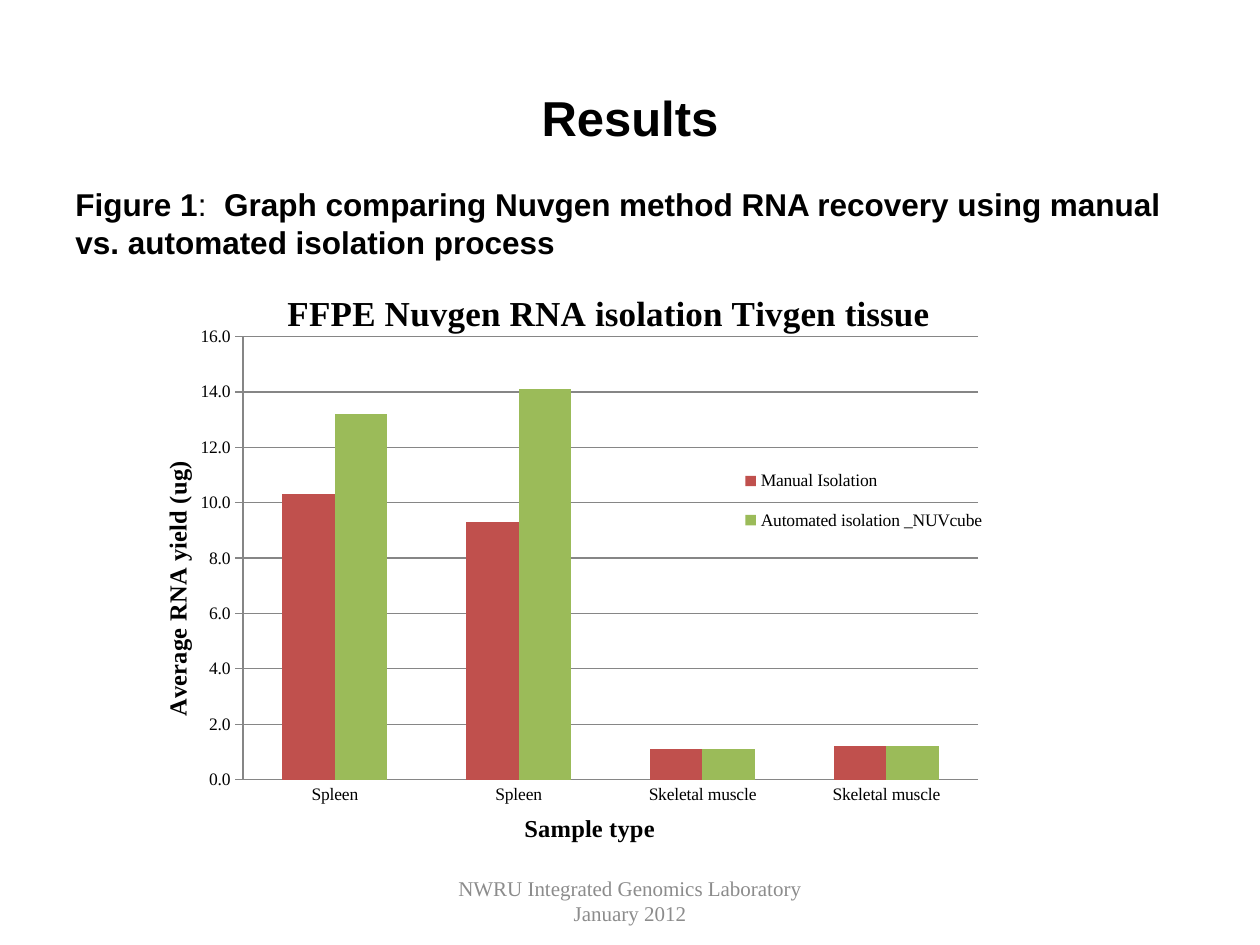
from dataclasses import dataclass

from lxml.etree import SubElement
from pptx import Presentation
from pptx.chart.data import CategoryChartData
from pptx.dml.color import RGBColor
from pptx.enum.chart import XL_CHART_TYPE as ChartType, XL_LEGEND_POSITION as LegendPosition
from pptx.enum.chart import XL_TICK_MARK as TickMark
from pptx.enum.text import MSO_ANCHOR as Anchor, PP_ALIGN as Align
from pptx.oxml.ns import qn
from pptx.util import Pt


@dataclass(frozen=True)
class Theme:
    """Colours, fonts and type sizes of the slide."""
    ink: str = "000000"
    muted: str = "8C8C8C"
    rule: str = "868686"
    sans: str = "Arial"
    serif: str = "Times New Roman"
    heading: float = 28
    chart_title: float = 20
    caption: float = 18
    axis_title: float = 14
    footer: float = 12
    label: float = 10


@dataclass(frozen=True)
class Box:
    """A rectangle in points."""
    left: float
    top: float
    width: float
    height: float

    def lengths(self):
        """Return the four sides as lengths."""
        return tuple(Pt(v) for v in (self.left, self.top, self.width, self.height))


@dataclass(frozen=True)
class Method:
    """One isolation method and its RNA yields."""
    name: str
    yields: tuple
    color: str


THEME = Theme()
SAMPLES = ("Spleen", "Spleen", "Skeletal muscle", "Skeletal muscle")
METHODS = (
    Method("Manual Isolation", (10.3, 9.3, 1.1, 1.2), "C0504D"),
    Method("Automated isolation _NUVcube", (13.2, 14.1, 1.1, 1.2), "9BBB59"),
)


def add_text(paragraph, text: str, *, size: float, font: str = THEME.serif,
             color: str = THEME.ink, bold: bool = False, align=None) -> None:
    """Append a formatted run to a paragraph."""
    run = paragraph.add_run()
    run.text = text
    run.font.size, run.font.name, run.font.bold = Pt(size), font, bold
    run.font.color.rgb = RGBColor.from_string(color)
    if align is not None:
        paragraph.alignment = align


def add_box(slide, box: Box, anchor=Anchor.TOP):
    """Add a wrapping text box and return its first paragraph."""
    frame = slide.shapes.add_textbox(*box.lengths()).text_frame
    frame.word_wrap = True
    frame.vertical_anchor = anchor
    return frame.paragraphs[0]


def place(part, *, after: str | None = None, **position: float) -> None:
    """Give a chart part a manual layout in fractions of the chart."""
    for old in part.findall(qn("c:layout")):
        part.remove(old)
    layout = part.makeelement(qn("c:layout"), {})
    manual = SubElement(layout, qn("c:manualLayout"))
    if after is None:
        SubElement(manual, qn("c:layoutTarget"), val="inner")
        part.insert(0, layout)
    else:
        part.find(qn(after)).addnext(layout)
    for key in ("x", "y"):
        SubElement(manual, qn(f"c:{key}Mode"), val="edge")
    for key, value in position.items():
        SubElement(manual, qn(f"c:{key}"), val=str(value))


def title_part(owner, title, text: str, size: float, x: float, y: float) -> None:
    """Write and place a chart or axis title."""
    add_text(title.text_frame.paragraphs[0], text, size=size, bold=True)
    place(owner.find(qn("c:title")), after="c:tx", x=x, y=y)


def add_yield_chart(slide, box: Box) -> None:
    """Add the clustered columns of RNA yield by sample."""
    data = CategoryChartData(number_format="0.0")
    data.categories = SAMPLES
    for method in METHODS:
        data.add_series(method.name, method.yields)
    chart = slide.shapes.add_chart(ChartType.COLUMN_CLUSTERED, *box.lengths(), data).chart
    chart.font.name, chart.font.size = THEME.serif, Pt(THEME.label)
    chart.font.color.rgb = RGBColor.from_string(THEME.ink)

    plot = chart.plots[0]
    plot.gap_width, plot.overlap, plot.vary_by_categories = 150, 0, False
    for series, method in zip(plot.series, METHODS):
        series.format.fill.solid()
        series.format.fill.fore_color.rgb = RGBColor.from_string(method.color)

    samples, yields = chart.category_axis, chart.value_axis
    samples.major_tick_mark = TickMark.NONE
    yields.major_tick_mark = TickMark.OUTSIDE
    yields.minimum_scale, yields.maximum_scale, yields.major_unit = 0, 16, 2
    yields.has_major_gridlines = True
    yields.tick_labels.number_format = "0.0"
    yields.tick_labels.number_format_is_linked = False
    for ruled in (samples, yields, yields.major_gridlines):
        ruled.format.line.color.rgb = RGBColor.from_string(THEME.rule)
        ruled.format.line.width = Pt(0.75)

    body = chart.element.find(qn("c:chart"))
    chart.has_title = True
    title_part(body, chart.chart_title, "FFPE Nuvgen RNA isolation Tivgen tissue",
               THEME.chart_title, 0.14, 0.02)
    title_part(samples._element, samples.axis_title, "Sample type",
               THEME.axis_title, 0.39, 0.93)
    title_part(yields._element, yields.axis_title, "Average RNA yield (ug)",
               THEME.axis_title, 0.01, 0.32)
    rotation = yields._element.find(qn("c:title")).find(".//" + qn("a:bodyPr"))
    rotation.set("rot", "-5400000")
    rotation.set("vert", "horz")

    chart.has_legend = True
    chart.legend.position = LegendPosition.RIGHT
    chart.legend.include_in_layout = False
    place(body.find(qn("c:legend")), after="c:legendPos", x=0.59, y=0.31, w=0.32, h=0.17)
    place(body.find(qn("c:plotArea")), x=0.1, y=0.11, w=0.77, h=0.77)


def main() -> None:
    """Build the results slide."""
    deck = Presentation()
    deck.slide_width, deck.slide_height = Pt(720), Pt(540)
    slide = deck.slides.add_slide(deck.slide_layouts[5])

    heading = slide.shapes.title
    heading.left, heading.top, heading.width, heading.height = Box(36, 21.6, 648, 90).lengths()
    heading.text_frame.vertical_anchor = Anchor.MIDDLE
    add_text(heading.text_frame.paragraphs[0], "Results", size=THEME.heading,
             font=THEME.sans, bold=True, align=Align.CENTER)

    footer = add_box(slide, Box(246, 500.4, 228, 28.8), Anchor.MIDDLE)
    add_text(footer, "NWRU Integrated Genomics Laboratory January 2012",
             size=THEME.footer, color=THEME.muted, align=Align.CENTER)

    caption = add_box(slide, Box(36, 102.24, 648, 72.72))
    for text, bold in (
        ("Figure 1", True),
        (":  ", False),
        ("Graph comparing Nuvgen method RNA recovery using manual "
         "vs. automated isolation process", True),
    ):
        add_text(caption, text, size=THEME.caption, font=THEME.sans, bold=bold)

    add_yield_chart(slide, Box(84.24, 156.24, 545.76, 329.76))
    deck.save("out.pptx")


if __name__ == "__main__":
    main()
